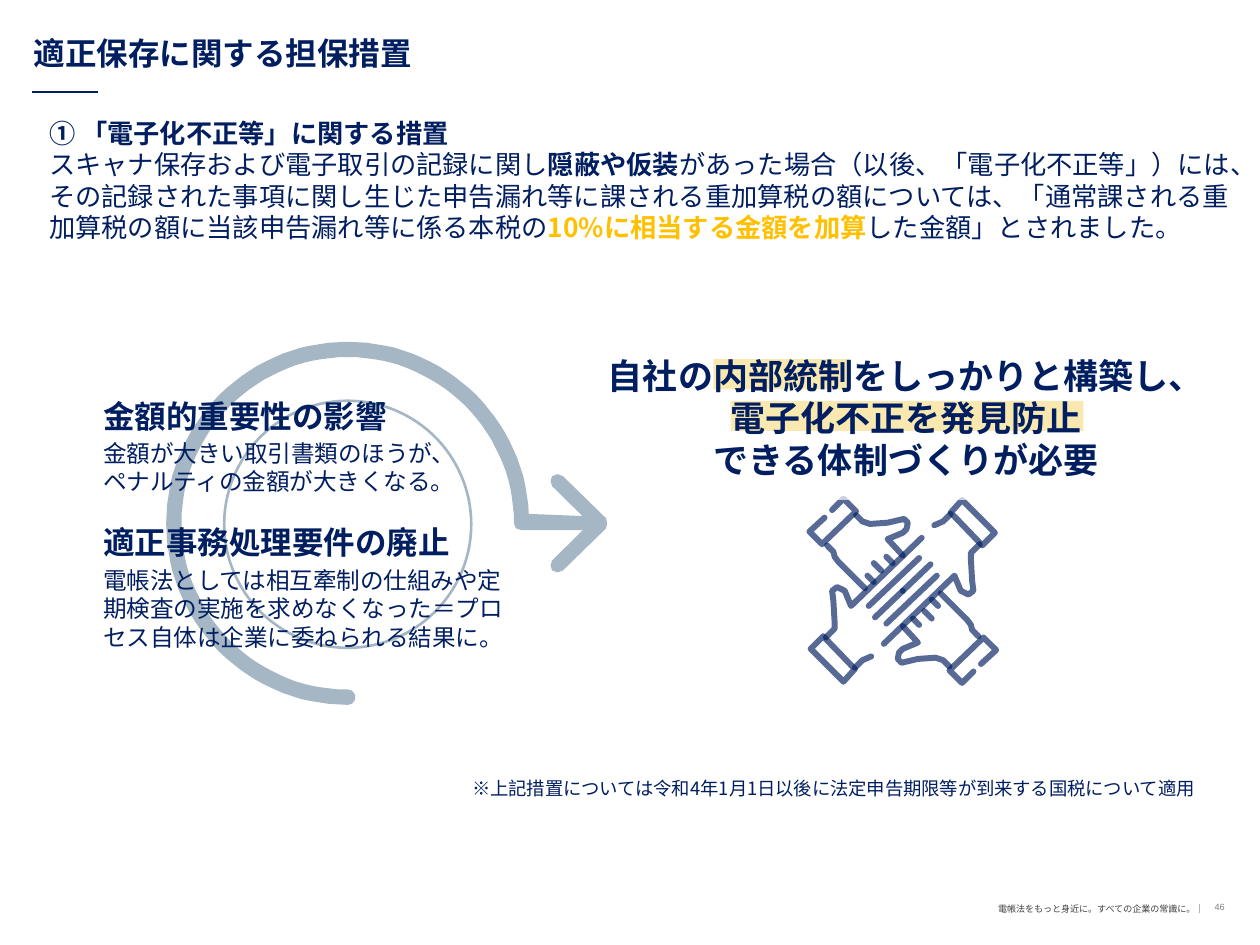
from dataclasses import dataclass
from math import cos, radians, sin

from lxml import etree
from pptx import Presentation
from pptx.dml.color import RGBColor
from pptx.enum.shapes import MSO_CONNECTOR, MSO_SHAPE
from pptx.enum.text import MSO_ANCHOR, MSO_AUTO_SIZE, PP_ALIGN
from pptx.oxml.ns import qn
from pptx.util import Cm, Pt

RECT, OVAL = MSO_SHAPE.RECTANGLE, MSO_SHAPE.OVAL
STRAIGHT = MSO_CONNECTOR.STRAIGHT
TOP, MIDDLE, BOTTOM = MSO_ANCHOR.TOP, MSO_ANCHOR.MIDDLE, MSO_ANCHOR.BOTTOM
LEFT, CENTER, RIGHT = PP_ALIGN.LEFT, PP_ALIGN.CENTER, PP_ALIGN.RIGHT
NO_AUTOFIT = MSO_AUTO_SIZE.NONE
TITLE_ONLY = 5


@dataclass(frozen=True)
class Theme:
    font: str = "Noto Sans CJK JP"
    number_font: str = "Arial"
    navy: str = "001E60"
    rule: str = "001F60"
    steel: str = "A5B7C5"
    amber: str = "FFC000"
    marker: str = "EEBB02"
    white: str = "FFFFFF"
    footer_gray: str = "404040"
    number_gray: str = "808080"
    message: float = 20
    heading: float = 18
    body: float = 15
    detail: float = 13.5
    note: float = 10.5
    footer: float = 5.2
    leading: float = 1.2


T = Theme()

# Half of the joined-hands icon around its centre; the rest is a half turn
ICON_GRID = 151
HAND_STROKES = [
    [(-56, -64), (-47, -73), (-37, -63), (-64, -37), (-74, -47), (-62, -58)],
    [(-37, -60), (-32, -55), (-26, -53), (-12, -54), (1, -57), (4, -54),
     (3, -49), (0, -46), (-12, -41), (0, -28)],
    [(-60, -36), (-55, -31), (-54, -27), (-51, -23), (-30, -2)],
    [(-13, -27), (-8, -22)],
    [(-23, -22), (-17, -16)],
    [(-28, -12), (-23, -7)],
    [(13, -26), (-27, 12)],
    [(22, -21), (0, 0)],
    [(-63, 36), (-38, 62), (-47, 72), (-73, 46), (-63, 36)],
    [(-61, 37), (-54, 30), (-54, 25), (-55, 8), (-56, 0), (-52, -3),
     (-46, 0), (-41, 12), (15, -42)],
    [(-38, 61), (-32, 55), (-25, 52)],
]


def rgb(value):
    return RGBColor.from_string(value)


def set_alpha(element, percent):
    color = element.find(".//" + qn("a:srgbClr"))
    etree.SubElement(color, qn("a:alpha"), val=str(percent * 1000))


def paint(sp, fill=None, line=None, width=1):
    sp.shadow.inherit = False
    if fill:
        sp.fill.solid()
        sp.fill.fore_color.rgb = rgb(fill)
    else:
        sp.fill.background()
    if line:
        sp.line.color.rgb = rgb(line)
        sp.line.width = Pt(width)
    else:
        sp.line.fill.background()
    return sp


def write(sp, paragraphs, size, bold=False, color=T.navy, font=T.font,
          align=LEFT, anchor=TOP):
    """Each paragraph is a list of (text, bold, color) runs; None inherits."""
    tf = sp.text_frame
    tf.word_wrap = True
    tf.auto_size = NO_AUTOFIT
    tf.vertical_anchor = anchor
    tf.margin_left = tf.margin_right = Cm(0.25)
    tf.margin_top, tf.margin_bottom = Cm(0.18), Cm(0.1)
    for i, runs in enumerate(paragraphs):
        p = tf.add_paragraph() if i else tf.paragraphs[0]
        p.alignment = align
        p.line_spacing = Pt(size * T.leading)
        p.space_before = p.space_after = Pt(0)
        p.font.size = Pt(size)
        p.font.bold = bold
        p.font.color.rgb = rgb(color)
        p.font.name = font
        defaults = p._p.pPr.find(qn("a:defRPr"))
        etree.SubElement(defaults, qn("a:ea"), typeface=font)
        for text, run_bold, run_color in runs:
            for n, part in enumerate(text.split("\n")):
                if n:
                    p.add_line_break()
                r = p.add_run()
                r.text = part
                if run_bold is not None:
                    r.font.bold = run_bold
                if run_color:
                    r.font.color.rgb = rgb(run_color)
    return tf


def add_text(slide, box, text, size, **style):
    sp = slide.shapes.add_textbox(*map(Cm, box))
    return write(sp, [[(text, None, None)]], size, **style)


def add_rect(slide, box, fill):
    return paint(slide.shapes.add_shape(RECT, *map(Cm, box)), fill)


def add_outline(slide, contours, scale, close, origin=(0, 0)):
    builder = slide.shapes.build_freeform(*contours[0][0], scale=scale)
    for i, points in enumerate(contours):
        if i:
            builder.move_to(*points[0])
        builder.add_line_segments(points[1:], close=close)
    return builder.convert_to_shape(*origin)


def arc(cx, cy, radius, start, end, step):
    return [(cx + radius * cos(radians(a)), cy + radius * sin(radians(a)))
            for a in range(start, end, step)]


def add_circling_arrow(slide):
    # Thin inner ring
    ring = slide.shapes.add_shape(OVAL, Cm(4.52), Cm(8.08), Cm(4.98), Cm(4.98))
    paint(ring, line=T.steel, width=1.5)
    # Three-quarter band with shaft, then arrowhead, in hundredths of a cm
    cx, cy, outer, inner = 701, 1055, 366, 335
    half = (outer - inner) / 2
    band = arc(cx, cy, outer, 90, 358, 3)
    band += [(1189, cy - 14), (1189, cy + 14), (1052, cy + 14), (1040, cy + 10)]
    band += arc(cx, cy, inner, 360, 89, -3)
    band += arc(cx, cy + inner + half, half, 270, 451, 15)
    upper = [(1189, cy), (1113, 980), (1110, 970), (1113, 960), (1124, 956),
             (1135, 960), (1222, 1045), (1224, cy)]
    head = upper + [(x, 2 * cy - y) for x, y in reversed(upper[1:-1])]
    for points in (band, head):
        paint(add_outline(slide, [points], Cm(0.01), True), T.steel)


def add_hands_icon(slide, cx, cy, size):
    turned = [[(-x, -y) for x, y in stroke] for stroke in HAND_STROKES]
    sp = add_outline(slide, HAND_STROKES + turned, size / ICON_GRID, False,
                     (cx, cy))
    paint(sp, line=T.navy, width=3.4)
    ln = sp._element.spPr.find(qn("a:ln"))
    ln.set("cap", "rnd")
    set_alpha(ln, 65)


def add_rule(slide, x1, x2, y):
    line = slide.shapes.add_connector(STRAIGHT, Cm(x1), Cm(y), Cm(x2), Cm(y))
    line.line.color.rgb = rgb(T.rule)
    line.line.width = Pt(1)
    etree.SubElement(line._element.spPr, qn("a:effectLst"))


def main():
    prs = Presentation()
    prs.slide_width, prs.slide_height = Cm(25.4), Cm(19.05)
    slide = prs.slides.add_slide(prs.slide_layouts[TITLE_ONLY])

    # Title and footer
    title = slide.shapes.title
    title.left, title.top = Cm(0.43), Cm(0.61)
    title.width, title.height = Cm(18.24), Cm(0.94)
    write(title, [[("適正保存に関する担保措置", None, None)]], T.heading,
          bold=True, anchor=BOTTOM)
    add_rule(slide, 0.64, 1.98, 1.85)
    add_text(slide, (19.71, 18.03, 4.83, 0.48),
             "電帳法をもっと身近に。すべての企業の常識に。｜", T.footer,
             color=T.footer_gray, align=RIGHT)
    number = add_text(slide, (23.65, 17.98, 1.42, 0.61), "46", T.footer,
                      color=T.number_gray, font=T.number_font, align=RIGHT,
                      anchor=MIDDLE)
    number.margin_left = number.margin_top = number.margin_bottom = 0
    number.margin_right = Cm(0.38)

    # Explanation of the measure
    intro = slide.shapes.add_textbox(Cm(0.74), Cm(2.18), Cm(24.38), Cm(3.4))
    write(intro, [
        [("① 「電子化不正等」に関する措置", True, None)],
        [("スキャナ保存および電子取引の記録に関し", None, None),
         ("隠蔽や仮装", True, None),
         ("があった場合（以後、「電子化不正等」）には、その記録された事項に関し"
          "生じた申告漏れ等に課される重加算税の額については、「通常課される"
          "重加算税の額に当該申告漏れ等に係る本税の", None, None),
         ("10%に相当する金額を加算", True, T.amber),
         ("した金額」とされました。", None, None)],
    ], T.body)

    # Two background points inside the arrow
    add_circling_arrow(slide)
    points = [
        (7.82, "金額的重要性の影響", 8.66, 10.72,
         "金額が大きい取引書類のほうが、\nペナルティの金額が大きくなる。"),
        (10.36, "適正事務処理要件の廃止", 11.23, 8.71,
         "電帳法としては相互牽制の仕組みや定期検査の実施を求めなくなった"
         "＝プロセス自体は企業に委ねられる結果に。"),
    ]
    for head_top, heading, top, width, detail in points:
        add_text(slide, (1.83, head_top, 10.72, 2.74), heading, T.heading,
                 bold=True)
        add_text(slide, (1.83, top, width, 2.74), detail, T.detail)

    # Conclusion with marker strokes and icon
    add_hands_icon(slide, Cm(18.2), Cm(11.91), Cm(3.84))
    add_rect(slide, (14.73, 8.08, 7.11, 0.61), T.marker)
    add_rect(slide, (14.38, 7.24, 2.77, 0.61), T.marker)
    message = add_rect(slide, (11.94, 6.68, 12.65, 3.4), T.white)
    set_alpha(message._element.spPr, 69)
    write(message, [[("自社の内部統制をしっかりと構築し、電子化不正を発見防止\n"
                      "できる体制づくりが必要", None, None)]],
          T.message, bold=True, align=CENTER, anchor=MIDDLE)

    # Note on the effective date
    add_text(slide, (9.27, 15.49, 15.54, 1.68),
             "※上記措置については令和4年1月1日以後に法定申告期限等が到来する"
             "国税について適用", T.note)

    prs.save("out.pptx")


if __name__ == "__main__":
    main()
